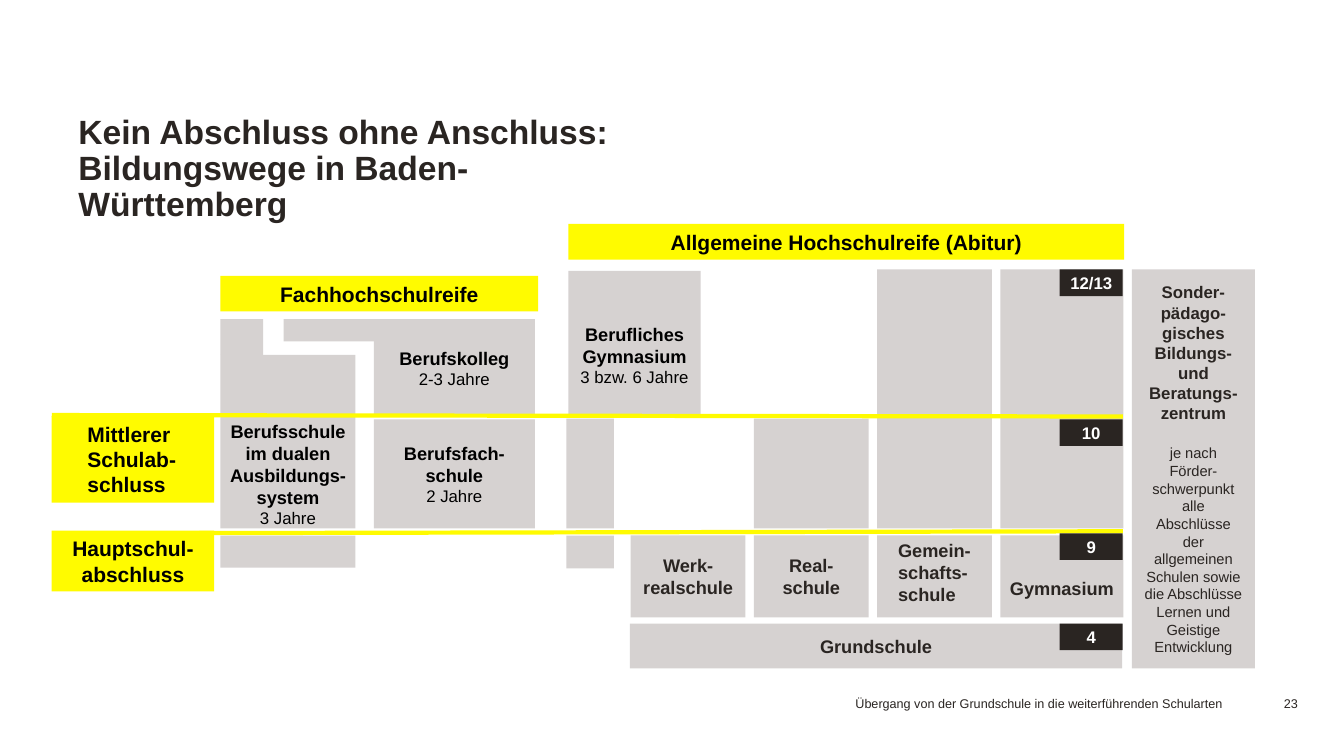
from lxml.etree import SubElement
from pptx import Presentation
from pptx.dml.color import RGBColor
from pptx.enum.shapes import MSO_CONNECTOR as CONN, MSO_SHAPE as SHAPE
from pptx.enum.text import MSO_ANCHOR as ANCHOR, MSO_AUTO_SIZE as AUTO, PP_ALIGN as ALIGN
from pptx.oxml.ns import qn
from pptx.util import Pt

GREY, YELLOW, DARK, BLACK, WHITE = 'D6D2D1', 'FFFB00', '2A2522', '000000', 'FFFFFF'

TITLE = 'Kein Abschluss ohne Anschluss:\vBildungswege in Baden-Württemberg'
FOOTER = 'Übergang von der Grundschule in die weiterführenden Schularten'
PAGE = '23'

DEGREES = [
    (406, 160, 397, 25.5, 'Allgemeine Hochschulreife (Abitur)', {}),
    (157.5, 197, 227, 25.5, 'Fachhochschulreife', {}),
    (37, 297, 116, 62, 'Mittlerer\vSchulab-\vschluss', {'indent': 25.5}),
    (37, 379, 116, 43.5, 'Hauptschul-\vabschluss', {}),
]
VOCATIONAL = [
    (157.5, 253.5, 96.5, 124, 'Berufsschule\vim dualen\vAusbildungs-\vsystem', '3 Jahre', 23.5),
    (267, 299.5, 115, 78, 'Berufsfach-\vschule', '2 Jahre', 0),
    (267, 228, 115, 69.5, 'Berufskolleg', '2-3 Jahre', 0),
    (406, 193.5, 94.5, 104, 'Berufliches\vGymnasium', '3 bzw. 6 Jahre', 8),
]
PLAIN = [
    (157.5, 228, 30.5, 25.5),
    (202.5, 228, 64.5, 16),
    (157.5, 382.5, 96.5, 23),
    (404.5, 299, 34, 78.5),
    (404.5, 382.5, 34, 23.5),
]
SCHOOLS = [
    ('Werk-\vrealschule', 82, None, {}),
    ('Real-\vschule', 82, 299, {}),
    ('Gemein-\vschafts-\vschule', 82, 192.5, {'shift': -3, 'indent': 15}),
    ('Gymnasium', 88, 192.5, {'shift': 8.5}),
]
SCHOOL_X, SCHOOL_STEP = 450.5, 88
MIDDLE_END, LOWER_TOP, LOWER_END = 377.5, 382.5, 441
GRADES = [('12/13', 192.5), ('10', 299.5), ('9', 381), ('4', 445.5)]
LEVELS = [(37, 296.5, 802, 297.5), (48, 381, 802, 379.5)]
CENTRE = 'Sonder-\vpädago-\vgisches\vBildungs-\vund\vBeratungs-\vzentrum'
CENTRE_NOTE = ('je nach\vFörder-\vschwerpunkt\valle\vAbschlüsse\vder\vallgemeinen\v'
               'Schulen sowie\vdie Abschlüsse\vLernen und\vGeistige\vEntwicklung')


def rgb(value):
    return RGBColor.from_string(value)


def write(p, text, size=13, color=DARK, bold=True, align=ALIGN.CENTER, before=0):
    p.text = text
    p.alignment = align
    p.space_before = Pt(before)
    for r in p.runs:
        r.font.name = 'Arial'
        r.font.size = Pt(size)
        r.font.bold = bold
        r.font.color.rgb = rgb(color)


def frame(tf, left=0, top=0, bottom=0, anchor=ANCHOR.TOP, wrap=True):
    tf.word_wrap = wrap
    tf.auto_size = AUTO.NONE
    tf.vertical_anchor = anchor
    tf.margin_left, tf.margin_right = Pt(left), Pt(0)
    tf.margin_top, tf.margin_bottom = Pt(top), Pt(bottom)


def box(s, x, y, w, h, fill, text='', shift=0, indent=0, **fmt):
    sp = s.shapes.add_shape(SHAPE.RECTANGLE, Pt(x), Pt(y), Pt(w), Pt(h))
    sp.shadow.inherit = False
    sp.fill.solid()
    sp.fill.fore_color.rgb = rgb(fill)
    sp.line.fill.background()
    if text:
        tf = sp.text_frame
        frame(tf, indent, max(2 * shift, 0), max(-2 * shift, 0), ANCHOR.MIDDLE)
        align = ALIGN.LEFT if indent else ALIGN.CENTER
        write(tf.paragraphs[0], text, align=align, **fmt)
    return sp


def level_line(s, x1, y1, x2, y2):
    line = s.shapes.add_connector(CONN.STRAIGHT, Pt(x1), Pt(y1), Pt(x2), Pt(y2))
    line.line.color.rgb = rgb(YELLOW)
    line.line.width = Pt(3)
    SubElement(line._element.spPr, qn('a:effectLst'))


def label(s, x, y, w, h, text):
    tf = s.shapes.add_textbox(Pt(x), Pt(y), Pt(w), Pt(h)).text_frame
    frame(tf, wrap=False)
    write(tf.paragraphs[0], text, size=9, bold=False, align=ALIGN.LEFT)


def main():
    prs = Presentation()
    prs.slide_width, prs.slide_height = Pt(960), Pt(540)
    s = prs.slides.add_slide(prs.slide_layouts[5])

    title = s.shapes.title
    title.left, title.top, title.width, title.height = Pt(56), Pt(73.5), Pt(428), Pt(62)
    frame(title.text_frame, top=8.5)
    p = title.text_frame.paragraphs[0]
    write(p, TITLE, size=24, align=ALIGN.LEFT)
    p.line_spacing = Pt(25.9)

    for rect in PLAIN:
        box(s, *rect, GREY)
    for x, y, w, h, name, years, shift in VOCATIONAL:
        sp = box(s, x, y, w, h, GREY, name, shift, color=BLACK)
        write(sp.text_frame.add_paragraph(), years, size=12, color=BLACK, bold=False)
    for x, y, w, h, name, opts in DEGREES:
        box(s, x, y, w, h, YELLOW, name, size=15, color=BLACK, **opts)

    for i, (name, w, top, opts) in enumerate(SCHOOLS):
        x = SCHOOL_X + i * SCHOOL_STEP
        if top:
            box(s, x, top, w, MIDDLE_END - top, GREY)
        box(s, x, LOWER_TOP, w, LOWER_END - LOWER_TOP, GREY, name, **opts)
    box(s, 450, 445.5, 351.5, 32, GREY, 'Grundschule')

    sp = box(s, 808.5, 192.5, 88, 285, GREY, CENTRE, size=12)
    write(sp.text_frame.add_paragraph(), CENTRE_NOTE, size=10.5, bold=False, before=15)

    for ends in LEVELS:
        level_line(s, *ends)
    for grade, y in GRADES:
        box(s, 757, y, 45, 19, DARK, grade, size=12, color=WHITE)

    label(s, 611, 497, 273, 13, FOOTER)
    label(s, 917, 497, 12, 13, PAGE)
    prs.save("out.pptx")


if __name__ == "__main__":
    main()
